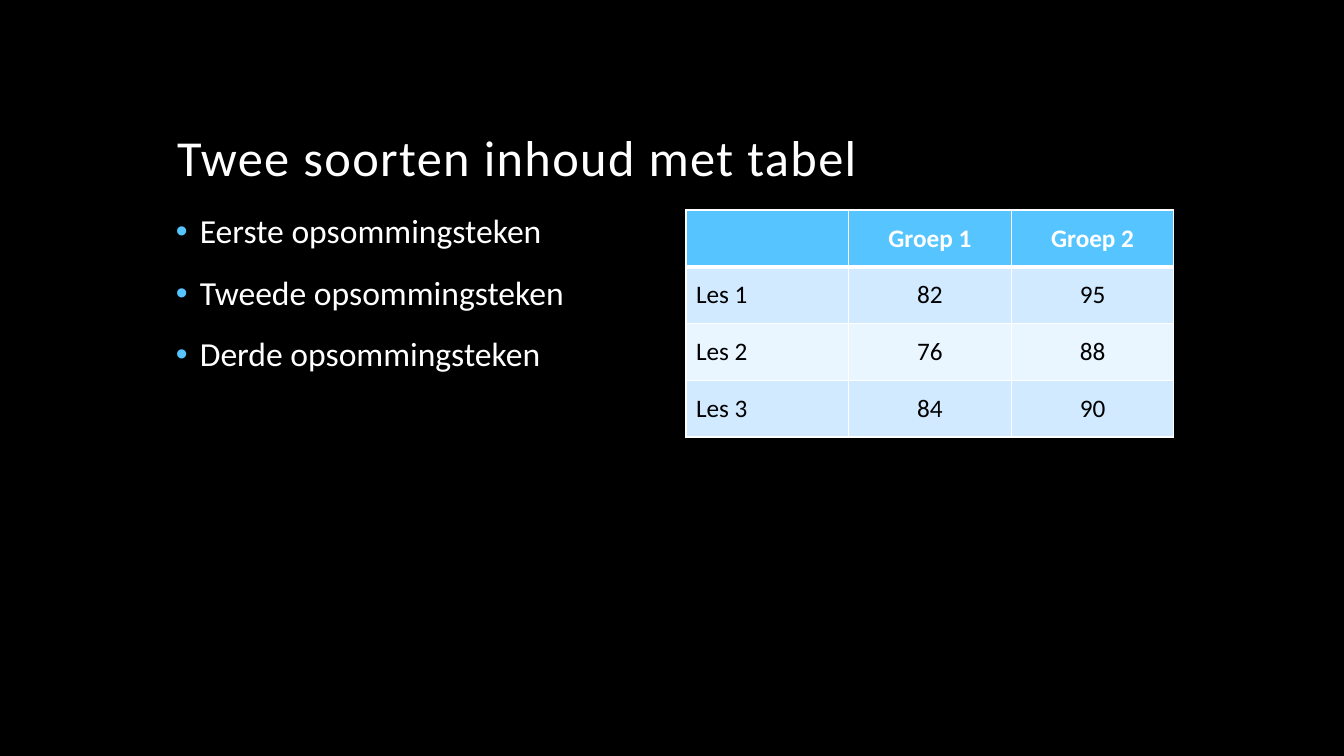
import dataclasses

import lxml.etree
import pptx
import pptx.dml.color
import pptx.enum.text
import pptx.oxml.ns
import pptx.util

EMU_PER_PX = 914400 / 100.8
ALIGN = pptx.enum.text.PP_ALIGN
ANCHOR = pptx.enum.text.MSO_ANCHOR


@dataclasses.dataclass(frozen=True)
class Theme:
    font: str = "Calibri"
    background: str = "000000"
    light: str = "FFFFFF"
    dark: str = "000000"
    accent: str = "56C5FF"
    bands: tuple = ("D1EAFF", "E9F5FF")
    title_size: int = 36
    bullet_size: int = 24
    table_size: int = 18
    grid_width: int = 1
    header_rule_width: int = 3


THEME = Theme()
TITLE = "Twee soorten inhoud met tabel"
BULLETS = ["Eerste opsommingsteken", "Tweede opsommingsteken", "Derde opsommingsteken"]
SCORES = [
    ["", "Groep 1", "Groep 2"],
    ["Les 1", "82", "95"],
    ["Les 2", "76", "88"],
    ["Les 3", "84", "90"],
]


def px(length):
    return pptx.util.Emu(round(length * EMU_PER_PX))


def rgb(colour):
    return pptx.dml.color.RGBColor.from_string(colour)


def add_xml(parent, tag, **attributes):
    return lxml.etree.SubElement(parent, pptx.oxml.ns.qn(tag), attributes)


def write(paragraph, text, *, size, colour=THEME.light, bold=False,
          align=ALIGN.LEFT, line_spacing=None, space_before=0, tracking=0):
    """Add one formatted run; sizes and spacing are in points."""
    paragraph.alignment = align
    paragraph.space_before = pptx.util.Pt(space_before)
    if line_spacing:
        paragraph.line_spacing = line_spacing
    run = paragraph.add_run()
    run.text = text
    run.font.name = THEME.font
    run.font.size = pptx.util.Pt(size)
    run.font.bold = bold
    run.font.color.rgb = rgb(colour)
    if tracking:
        run.font._element.set("spc", str(tracking * 100))


def set_bullet(paragraph, indent):
    properties = paragraph._p.get_or_add_pPr()
    properties.set("marL", str(px(indent)))
    properties.set("indent", str(-px(indent)))
    add_xml(add_xml(properties, "a:buClr"), "a:srgbClr", val=THEME.accent)
    add_xml(properties, "a:buFont", typeface="Arial")
    add_xml(properties, "a:buChar", char="•")


def set_borders(cell, top, bottom):
    """Draw all four cell edges; top and bottom are widths in points."""
    properties = cell._tc.get_or_add_tcPr()
    widths = {"L": THEME.grid_width, "R": THEME.grid_width, "T": top, "B": bottom}
    for side, width in widths.items():
        line = add_xml(properties, f"a:ln{side}", w=str(pptx.util.Pt(width)))
        add_xml(add_xml(line, "a:solidFill"), "a:srgbClr", val=THEME.light)


def place_title(slide):
    title = slide.shapes.title
    title.left, title.top, title.width, title.height = map(px, (167, 42, 1008, 151))
    frame = title.text_frame
    frame.vertical_anchor = ANCHOR.BOTTOM
    frame.auto_size = pptx.enum.text.MSO_AUTO_SIZE.NONE
    write(frame.paragraphs[0], TITLE, size=THEME.title_size, line_spacing=0.9, tracking=1)


def add_bullets(slide):
    frame = slide.shapes.add_textbox(*map(px, (166, 210, 487, 454))).text_frame
    frame.word_wrap = True
    for index, text in enumerate(BULLETS):
        paragraph = frame.add_paragraph() if index else frame.paragraphs[0]
        set_bullet(paragraph, 24)
        write(paragraph, text, size=THEME.bullet_size, line_spacing=0.9,
              space_before=18 if index else 0)


def format_cell(cell, text, row, column):
    header = row == 0
    set_borders(cell,
                top=THEME.header_rule_width if row == 1 else THEME.grid_width,
                bottom=THEME.header_rule_width if header else THEME.grid_width)
    cell.fill.solid()
    cell.fill.fore_color.rgb = rgb(THEME.accent if header else THEME.bands[(row - 1) % 2])
    cell.vertical_anchor = ANCHOR.MIDDLE
    if text:
        write(cell.text_frame.paragraphs[0], text, size=THEME.table_size, bold=header,
              colour=THEME.light if header else THEME.dark,
              align=ALIGN.CENTER if column else ALIGN.LEFT)


def add_scores(slide):
    width, height = px(488), px(227)
    table = slide.shapes.add_table(
        len(SCORES), len(SCORES[0]), px(686), px(210), width, height).table
    for row, texts in enumerate(SCORES):
        for column, text in enumerate(texts):
            format_cell(table.cell(row, column), text, row, column)


def main():
    deck = pptx.Presentation()
    deck.slide_width, deck.slide_height = px(1344), px(756)
    slide = deck.slides.add_slide(deck.slide_layouts.get_by_name("Title Only"))
    slide.background.fill.solid()
    slide.background.fill.fore_color.rgb = rgb(THEME.background)
    place_title(slide)
    add_bullets(slide)
    add_scores(slide)
    deck.save("out.pptx")


if __name__ == "__main__":
    main()
